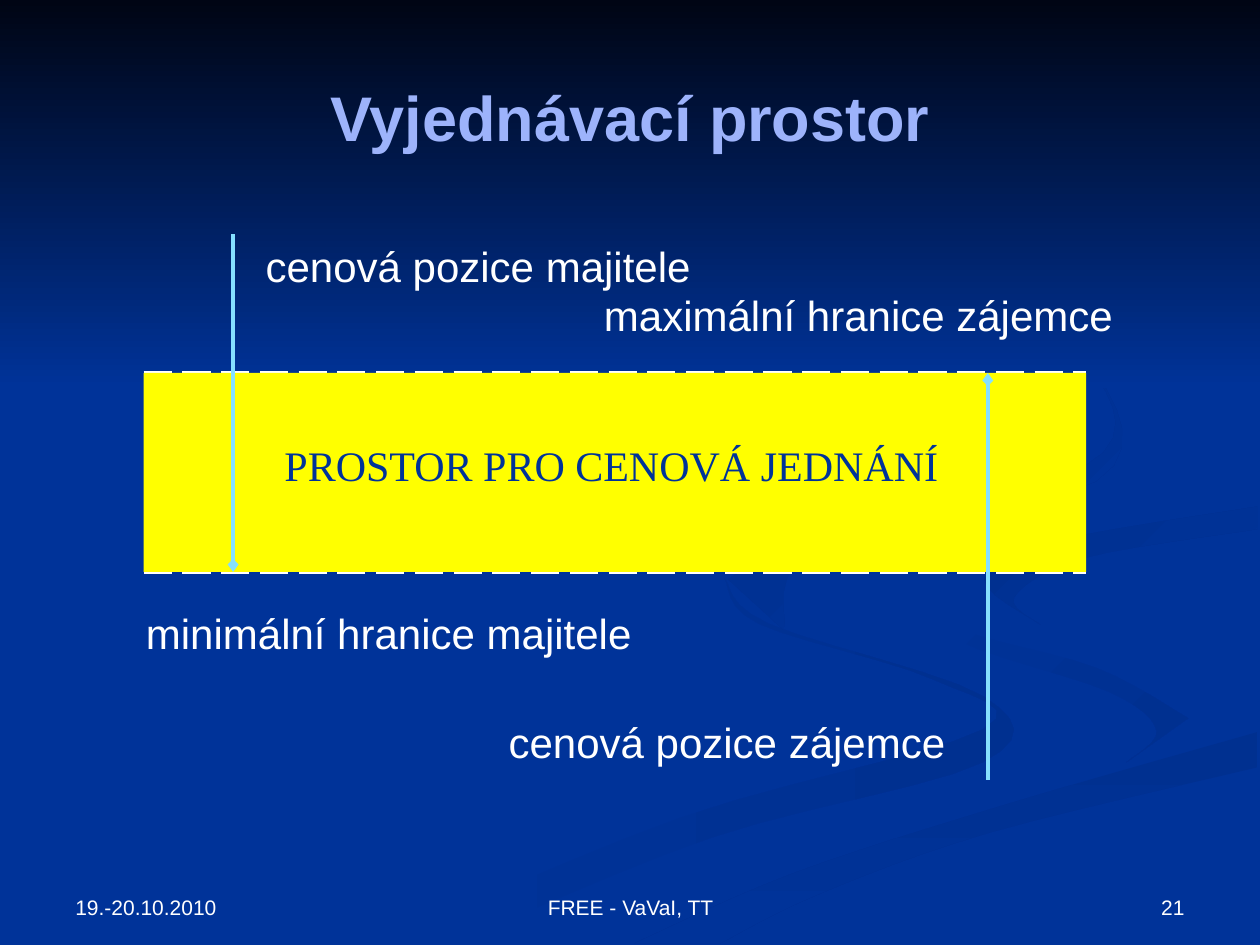
import pptx
import pptx.util
import pptx.dml.color
import pptx.enum.dml
import pptx.enum.shapes
import pptx.enum.text
from lxml import etree
from pptx.oxml.ns import qn

Inches = pptx.util.Inches
Pt = pptx.util.Pt
RGBColor = pptx.dml.color.RGBColor
ALIGN = pptx.enum.text.PP_ALIGN
ANCHOR = pptx.enum.text.MSO_ANCHOR

NIGHT = RGBColor(0x00, 0x05, 0x14)
BLUE = RGBColor(0x00, 0x33, 0x99)
SHADE = RGBColor(0x00, 0x30, 0x90)
LAVENDER = RGBColor(0x9D, 0xB3, 0xFB)
CYAN = RGBColor(0x85, 0xE0, 0xFF)
YELLOW = RGBColor(0xFF, 0xFF, 0x00)
WHITE = RGBColor(0xFF, 0xFF, 0xFF)

# Bargaining zone
LEFT, RIGHT, TOP, BOTTOM = 1.14, 8.62, 2.96, 4.54

# Background ribbons: first colour, last colour, clockwise angle, two edges
RIBBONS = [
    (BLUE, SHADE, 0,
     [(5.75, 4.59), (6.02, 4.95), (7.4, 5.39), (7.8, 5.79), (5.4, 6.49), (3, 7.49)],
     [(3.6, 7.49), (5.64, 6.65), (7.8, 6.05), (7.81, 5.53), (6.1, 4.95), (5.75, 4.59)]),
    (BLUE, SHADE, 45,
     [(7.24, 4.64), (7.6, 5.08), (8.8, 5.49), (9.18, 5.8), (8.94, 6.05)],
     [(9.43, 5.7), (8.7, 5.3), (7.58, 4.98), (7.24, 4.64)]),
    (SHADE, BLUE, 90,
     [(5.03, 7.49), (6.3, 6.93), (8, 6.38), (9.98, 5.81)],
     [(9.98, 6.09), (7.85, 6.61), (6.49, 7.1), (5.71, 7.49)]),
    (SHADE, BLUE, 45,
     [(8.26, 4.96), (8.05, 4.74), (8.6, 4.43), (9.98, 4.2)],
     [(9.98, 4.02), (8.35, 4.3), (7.81, 4.6), (8.26, 4.96)]),
    (SHADE, BLUE, 45,
     [(7.62, 2.33), (8.7, 2.97), (8.7, 3.82), (6.49, 4.36), (6.22, 5)],
     [(5.78, 4.6), (6.49, 4.2), (8.61, 3.7), (8.7, 2.99), (7.62, 2.33)]),
]

FOOTERS = [
    ("19.-20.10.2010", 0.5, 2.33, ALIGN.LEFT),
    ("21", 7.17, 2.33, ALIGN.RIGHT),
    ("FREE - VaVaI, TT", 3.42, 3.17, ALIGN.CENTER),
]

LABELS = [
    ("cenová pozice majitele", 2.01, 1.86, 4.17, ALIGN.LEFT),
    ("cenová pozice zájemce", 3.43, 5.64, 4.17, ALIGN.RIGHT),
    ("maximální hranice zájemce", 4.13, 2.25, 4.8, ALIGN.RIGHT),
    ("minimální hranice majitele", 1.06, 4.77, 4.17, ALIGN.LEFT),
]


def smooth_edge(edge, steps=6):
    """Return points on a Catmull-Rom curve through the edge's points."""
    padded = [edge[0], *edge, edge[-1]]
    curve = []
    for a, b, c, d in zip(padded, padded[1:], padded[2:], padded[3:]):
        for step in range(steps):
            t = step / steps
            curve.append(tuple(
                q + t / 2 * (r - p + t * (2 * p - 5 * q + 4 * r - s
                                          + t * (3 * (q - r) + s - p)))
                for p, q, r, s in zip(a, b, c, d)))
    return curve + [edge[-1]]


def fill_gradient(shape, first, last, angle):
    """Fill without an outline; the angle is in degrees clockwise."""
    shape.shadow.inherit = False
    shape.line.fill.background()
    shape.fill.gradient()
    shape.fill.gradient_angle = (360 - angle) % 360
    for stop, color in zip(shape.fill.gradient_stops, (first, last)):
        stop.color.rgb = color


def add_ribbon(slide, first, last, angle, near_edge, far_edge):
    outline = smooth_edge(near_edge) + smooth_edge(far_edge)
    points = [(Inches(x), Inches(y)) for x, y in outline]
    builder = slide.shapes.build_freeform(*points[0])
    builder.add_line_segments(points[1:], close=True)
    fill_gradient(builder.convert_to_shape(), first, last, angle)


def add_rectangle(slide, left, top, width, height):
    return slide.shapes.add_shape(
        pptx.enum.shapes.MSO_SHAPE.RECTANGLE,
        Inches(left), Inches(top), Inches(width), Inches(height))


def format_text(shape, text, size, color, align, anchor, font="Arial", bold=False):
    frame = shape.text_frame
    frame.word_wrap = True
    frame.vertical_anchor = anchor
    frame.text = text
    paragraph = frame.paragraphs[0]
    paragraph.alignment = align
    run_font = paragraph.runs[0].font
    run_font.name, run_font.size, run_font.bold = font, Pt(size), bold
    run_font.color.rgb = color


def add_text(slide, text, left, top, width, height, size, align,
             color=WHITE, anchor=ANCHOR.TOP, font="Arial"):
    box = slide.shapes.add_textbox(
        Inches(left), Inches(top), Inches(width), Inches(height))
    format_text(box, text, size, color, align, anchor, font)


def add_line(slide, start, end, color, width):
    line = slide.shapes.add_connector(
        pptx.enum.shapes.MSO_CONNECTOR.STRAIGHT,
        *(Inches(value) for value in start + end))
    line.line.color.rgb = color
    line.line.width = Pt(width)
    etree.SubElement(line._element.spPr, qn("a:effectLst"))
    return line


def add_boundary(slide, y):
    boundary = add_line(slide, (LEFT, y), (RIGHT, y), WHITE, 2)
    boundary.line.dash_style = pptx.enum.dml.MSO_LINE.LONG_DASH


def add_price_arrow(slide, x, start_y, end_y):
    arrow = add_line(slide, (x, start_y), (x, end_y), CYAN, 2.5)
    etree.SubElement(arrow.line._get_or_add_ln(), qn("a:tailEnd"),
                     type="arrow", w="sm", len="sm")


def main():
    presentation = pptx.Presentation()
    presentation.slide_width, presentation.slide_height = Inches(10), Inches(7.5)
    slide = presentation.slides.add_slide(presentation.slide_layouts[5])
    slide.background.fill.solid()
    slide.background.fill.fore_color.rgb = BLUE

    for ribbon in RIBBONS:
        add_ribbon(slide, *ribbon)
    fill_gradient(add_rectangle(slide, 0, 0, 10, 3.08), NIGHT, BLUE, 90)

    title = slide.shapes.title
    title.left, title.top = Inches(0.5), Inches(0.3)
    title.width, title.height = Inches(9), Inches(1.25)
    format_text(title, "Vyjednávací prostor", 36, LAVENDER, ALIGN.CENTER,
                ANCHOR.MIDDLE, bold=True)
    slide.shapes._spTree.append(title._element)  # in front of the background

    for text, left, width, align in FOOTERS:
        add_text(slide, text, left, 6.83, width, 0.52, 12, align, anchor=ANCHOR.BOTTOM)

    for y in (TOP, BOTTOM):
        add_boundary(slide, y)
    zone = add_rectangle(slide, LEFT, TOP, RIGHT - LEFT, BOTTOM - TOP)
    zone.shadow.inherit = False
    zone.line.fill.background()
    zone.fill.solid()
    zone.fill.fore_color.rgb = YELLOW

    add_price_arrow(slide, 1.85, 1.86, BOTTOM)
    add_price_arrow(slide, 7.84, 6.19, TOP)
    for text, left, top, width, align in LABELS:
        add_text(slide, text, left, top, width, 0.5, 24, align)
    add_text(slide, "PROSTOR PRO CENOVÁ JEDNÁNÍ", 2.16, 3.44, 5.43, 0.5, 24,
             ALIGN.LEFT, BLUE, font="Times New Roman")

    presentation.save("out.pptx")


if __name__ == "__main__":
    main()
